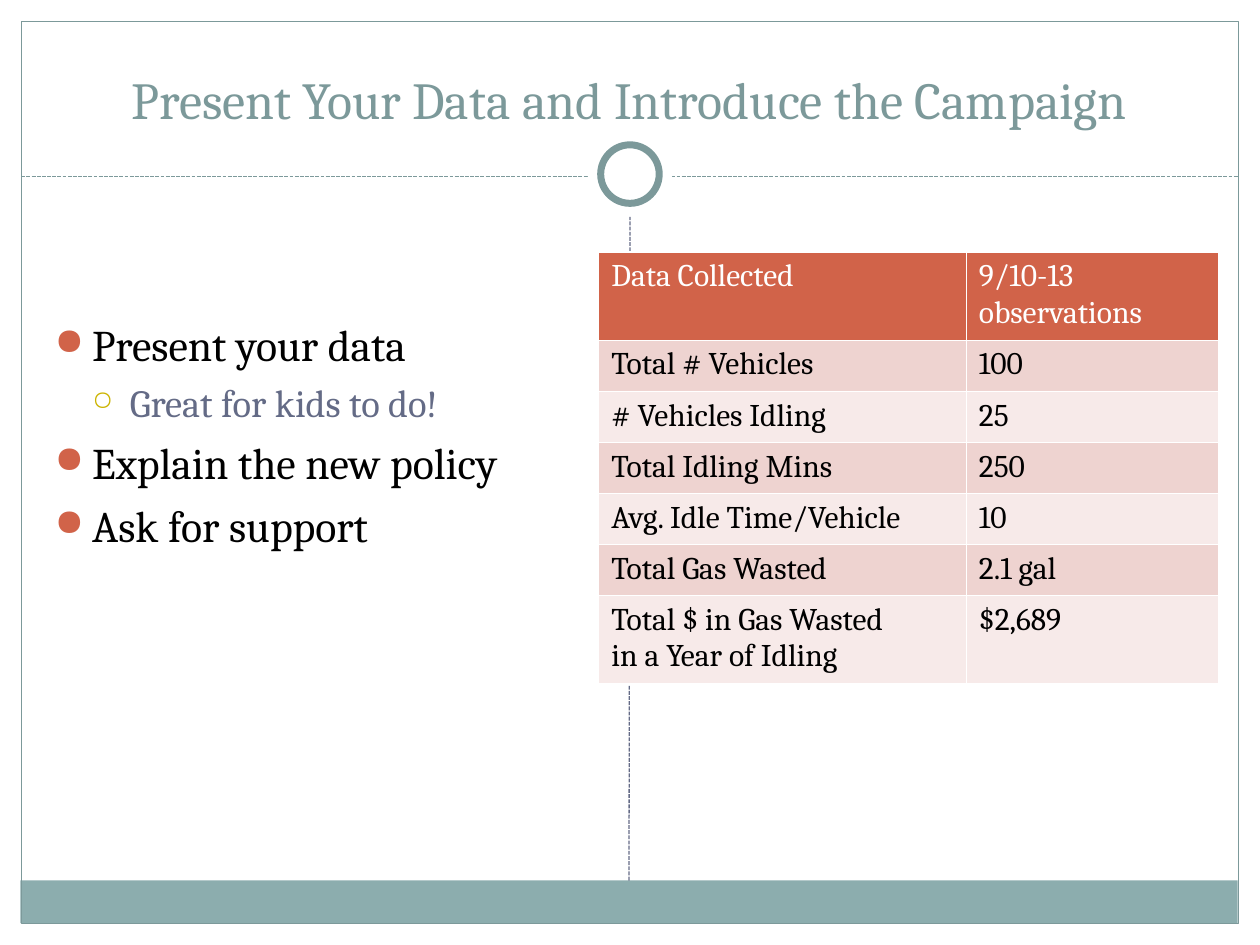
"""Build a slide that pairs campaign talking points with a table of idling data."""
from dataclasses import dataclass

from lxml import etree
from pptx import Presentation
from pptx.dml.color import RGBColor
from pptx.enum.dml import MSO_LINE
from pptx.enum.shapes import MSO_CONNECTOR, MSO_SHAPE
from pptx.enum.text import MSO_ANCHOR, PP_ALIGN
from pptx.oxml.ns import qn
from pptx.shapes.autoshape import Shape
from pptx.slide import Slide
from pptx.table import _Cell
from pptx.text.text import TextFrame, _Paragraph
from pptx.util import Cm, Pt

RECTANGLE, ELLIPSE = MSO_SHAPE.RECTANGLE, MSO_SHAPE.OVAL
STRAIGHT = MSO_CONNECTOR.STRAIGHT
DASHED = MSO_LINE.SQUARE_DOT
CENTER = PP_ALIGN.CENTER
TOP, BOTTOM = MSO_ANCHOR.TOP, MSO_ANCHOR.BOTTOM


@dataclass(frozen=True)
class Theme:
    """Colours, font and type sizes."""
    font: str = "Cambria"
    white: str = "FFFFFF"
    black: str = "000000"
    teal: str = "7C999A"
    footer: str = "8CADAE"
    slate: str = "646B86"
    red: str = "D16349"
    yellow: str = "CCB400"
    bands: tuple[str, str] = ("EED3D0", "F7EAE9")
    title_size: float = 29.7
    table_size: float = 18
    hairline: float = 0.75
    ring_width: float = 4
    border_width: float = 1


THEME = Theme()


@dataclass(frozen=True)
class Box:
    """A rectangle in centimetres."""
    left: float
    top: float
    width: float
    height: float

    def lengths(self) -> tuple[Cm, Cm, Cm, Cm]:
        """Give the four lengths that python-pptx expects."""
        return Cm(self.left), Cm(self.top), Cm(self.width), Cm(self.height)


@dataclass(frozen=True)
class BulletStyle:
    """The look of one outline level."""
    symbol: str
    symbol_color: str
    symbol_percent: int
    text_color: str
    size: float
    space_before: float
    indent: float


HANGING = 0.76
POINT = BulletStyle("●", THEME.red, 85, THEME.black, 25, 5.8, HANGING)
DETAIL = BulletStyle("○", THEME.yellow, 70, THEME.slate, 22, 5.1, 2 * HANGING)

BULLETS = (
    ("Present your data", POINT),
    ("Great for kids to do!", DETAIL),
    ("Explain the new policy", POINT),
    ("Ask for support", POINT),
)

TABLE_ROWS = (
    (("Data Collected",), ("9/10-13 observations",)),
    (("Total # Vehicles",), ("100",)),
    (("# Vehicles Idling",), ("25",)),
    (("Total Idling Mins",), ("250",)),
    (("Avg. Idle Time/Vehicle",), ("10",)),
    (("Total Gas Wasted",), ("2.1 gal",)),
    (("Total $ in Gas Wasted", "in a Year of Idling"), ("$2,689",)),
)
COLUMN_WIDTHS = (7.41, 5.08)
SINGLE_ROW, DOUBLE_ROW = 1.03, 1.71
ROW_HEIGHTS = (DOUBLE_ROW, *[SINGLE_ROW] * 5, DOUBLE_ROW)


def add_run(paragraph: _Paragraph, text: str, size: float, color: str) -> None:
    """Add one formatted run to a paragraph."""
    run = paragraph.add_run()
    run.text = text
    run.font.name = THEME.font
    run.font.size = Pt(size)
    run.font.color.rgb = RGBColor.from_string(color)


def add_panel(slide: Slide, kind: int, box: Box, fill: str | None = None,
              line: str | None = None, width: float = THEME.hairline) -> Shape:
    """Add a preset shape with an optional fill and outline."""
    shape = slide.shapes.add_shape(kind, *box.lengths())
    shape.shadow.inherit = False
    if fill:
        shape.fill.solid()
        shape.fill.fore_color.rgb = RGBColor.from_string(fill)
    else:
        shape.fill.background()
    if line:
        shape.line.color.rgb = RGBColor.from_string(line)
        shape.line.width = Pt(width)
    else:
        shape.line.fill.background()
    return shape


def add_dashed_line(slide: Slide, start: tuple[float, float],
                    end: tuple[float, float], color: str) -> None:
    """Add a thin dashed connector."""
    connector = slide.shapes.add_connector(STRAIGHT, *map(Cm, start + end))
    connector.line.color.rgb = RGBColor.from_string(color)
    connector.line.width = Pt(THEME.hairline)
    connector.line.dash_style = DASHED
    etree.SubElement(connector._element.spPr, qn("a:effectLst"))


def add_text_box(slide: Slide, box: Box, anchor: int) -> TextFrame:
    """Add a wrapping text box and give its frame."""
    frame = slide.shapes.add_textbox(*box.lengths()).text_frame
    frame.word_wrap = True
    frame.vertical_anchor = anchor
    return frame


def set_bullet(paragraph: _Paragraph, style: BulletStyle) -> None:
    """Give a paragraph its hanging indent and bullet."""
    properties = paragraph._p.get_or_add_pPr()
    properties.set("marL", str(Cm(style.indent)))
    properties.set("indent", str(-Cm(HANGING)))
    color = etree.SubElement(properties, qn("a:buClr"))
    etree.SubElement(color, qn("a:srgbClr"), val=style.symbol_color)
    etree.SubElement(properties, qn("a:buSzPct"), val=str(style.symbol_percent * 1000))
    etree.SubElement(properties, qn("a:buChar"), char=style.symbol)


def style_cell(cell: _Cell, fill: str) -> None:
    """Give a cell white borders and a solid fill."""
    properties = cell._tc.get_or_add_tcPr()
    for side in ("lnL", "lnR", "lnT", "lnB"):
        border = etree.SubElement(properties, qn(f"a:{side}"), w=str(Pt(THEME.border_width)))
        solid = etree.SubElement(border, qn("a:solidFill"))
        etree.SubElement(solid, qn("a:srgbClr"), val=THEME.white)
    cell.fill.solid()
    cell.fill.fore_color.rgb = RGBColor.from_string(fill)


def add_frame(slide: Slide) -> None:
    """Draw the border, footer band, divider lines and ring."""
    add_panel(slide, RECTANGLE, Box(0.41, 17.75, 24.54, 0.86), THEME.footer)
    add_panel(slide, RECTANGLE, Box(0.43, 0.43, 24.54, 18.19), line=THEME.teal)
    add_dashed_line(slide, (0.43, 3.56), (24.97, 3.56), THEME.teal)
    add_panel(slide, ELLIPSE, Box(11.85, 2.67, 1.7, 1.7), THEME.white)
    add_panel(slide, ELLIPSE, Box(12.11, 2.92, 1.18, 1.18), THEME.white,
              THEME.teal, THEME.ring_width)
    add_dashed_line(slide, (12.68, 17.75), (12.7, 4.37), THEME.slate)


def add_title(slide: Slide, text: str) -> None:
    """Add the centred title."""
    paragraph = add_text_box(slide, Box(0.85, 0.64, 23.7, 2.11), BOTTOM).paragraphs[0]
    paragraph.alignment = CENTER
    add_run(paragraph, text, THEME.title_size, THEME.teal)


def add_bullets(slide: Slide) -> None:
    """Add the outline on the left."""
    frame = add_text_box(slide, Box(0.85, 3.81, 11.22, 13), TOP)
    frame.margin_top = Cm(2.6)
    for index, (text, style) in enumerate(BULLETS):
        paragraph = frame.add_paragraph() if index else frame.paragraphs[0]
        paragraph.space_before = Pt(style.space_before)
        set_bullet(paragraph, style)
        add_run(paragraph, text, style.size, style.text_color)


def add_data_table(slide: Slide) -> None:
    """Add the table of observations on the right."""
    box = Box(12.07, 5.08, sum(COLUMN_WIDTHS), sum(ROW_HEIGHTS))
    table = slide.shapes.add_table(len(TABLE_ROWS), len(COLUMN_WIDTHS), *box.lengths()).table
    table.first_row = table.horz_banding = False
    for column, width in zip(table.columns, COLUMN_WIDTHS):
        column.width = Cm(width)
    for index, (row, height, texts) in enumerate(zip(table.rows, ROW_HEIGHTS, TABLE_ROWS)):
        row.height = Cm(height)
        fill = THEME.bands[(index - 1) % 2] if index else THEME.red
        color = THEME.black if index else THEME.white
        for cell, lines in zip(row.cells, texts):
            style_cell(cell, fill)
            frame = cell.text_frame
            for number, line in enumerate(lines):
                paragraph = frame.add_paragraph() if number else frame.paragraphs[0]
                add_run(paragraph, line, THEME.table_size, color)


def main() -> None:
    """Build and save the presentation."""
    presentation = Presentation()
    presentation.slide_width, presentation.slide_height = Cm(25.4), Cm(19.05)
    slide = presentation.slides.add_slide(presentation.slide_layouts[6])
    add_frame(slide)
    add_title(slide, "Present Your Data and Introduce the Campaign")
    add_bullets(slide)
    add_data_table(slide)
    presentation.save("out.pptx")


if __name__ == "__main__":
    main()
